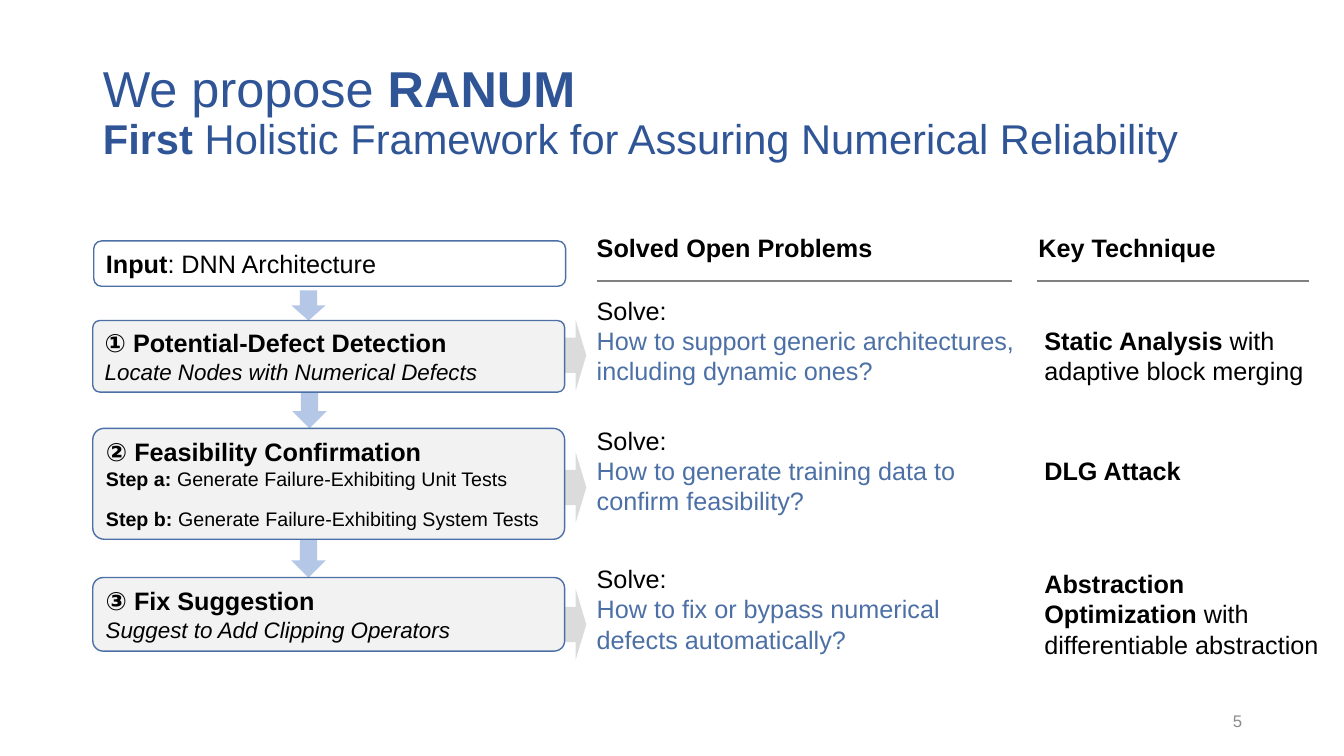
from dataclasses import dataclass

from lxml.etree import SubElement
from pptx import Presentation
from pptx.dml.color import RGBColor
from pptx.enum.shapes import MSO_CONNECTOR, MSO_SHAPE as Preset
from pptx.enum.text import MSO_ANCHOR as Anchor, MSO_AUTO_SIZE as AutoSize, PP_ALIGN as Align
from pptx.oxml.ns import qn
from pptx.shapes.autoshape import Shape
from pptx.slide import Slide
from pptx.text.text import TextFrame
from pptx.util import Inches, Pt

FONT = "Arial"
NAVY = RGBColor(0x2F, 0x55, 0x97)
BLUE = RGBColor(0x4C, 0x70, 0xA6)
LIGHT_BLUE = RGBColor(0xB4, 0xC7, 0xE7)
PALE_GRAY = RGBColor(0xF2, 0xF2, 0xF2)
ARROW_GRAY = RGBColor(0xDB, 0xDB, 0xDB)
RULE_GRAY = RGBColor(0x80, 0x80, 0x80)
NUMBER_GRAY = RGBColor(0x8C, 0x8C, 0x8C)
BLACK = RGBColor(0, 0, 0)

STEP_LEFT, STEP_WIDTH = 0.92, 4.68
PROBLEM_LEFT, TECHNIQUE_LEFT = 5.82, 10.26
HEADING_TOP, RULE_TOP = 2.26, 2.79


@dataclass
class Piece:
    text: str
    bold: bool = False
    italic: bool = False
    size: float = 18
    color: RGBColor = BLACK


@dataclass
class Line:
    pieces: list[Piece]
    space_before: float = 0


@dataclass
class Box:
    left: float
    top: float
    width: float
    height: float


@dataclass
class Step:
    top: float
    height: float
    corner: float
    lines: list[Line]
    pointer_top: float
    problem: str
    problem_box: Box
    technique: list[Line]
    technique_box: Box


@dataclass
class Heading:
    text: str
    box: Box
    rule_start: float
    rule_end: float


def write(frame: TextFrame, lines: list[Line]) -> None:
    frame.word_wrap = True
    for index, line in enumerate(lines):
        paragraph = frame.add_paragraph() if index else frame.paragraphs[0]
        paragraph.alignment = Align.LEFT
        paragraph.space_before = Pt(line.space_before)
        for piece in line.pieces:
            if piece.text == "\v":
                paragraph.add_line_break()
                continue
            run = paragraph.add_run()
            run.text = piece.text
            font = run.font
            font.name, font.size = FONT, Pt(piece.size)
            font.bold, font.italic = piece.bold, piece.italic
            font.color.rgb = piece.color


def place(box: Box) -> tuple[int, int, int, int]:
    return Inches(box.left), Inches(box.top), Inches(box.width), Inches(box.height)


def add_text(slide: Slide, box: Box, lines: list[Line]) -> Shape:
    shape = slide.shapes.add_textbox(*place(box))
    write(shape.text_frame, lines)
    shape.text_frame.auto_size = AutoSize.SHAPE_TO_FIT_TEXT
    return shape


def add_arrow(slide: Slide, box: Box, color: RGBColor, rotation: float = 0) -> None:
    shape = slide.shapes.add_shape(Preset.DOWN_ARROW, *place(box))
    shape.shadow.inherit = False
    shape.fill.solid()
    shape.fill.fore_color.rgb = color
    shape.line.fill.background()
    shape.rotation = rotation


def add_card(slide: Slide, box: Box, lines: list[Line], corner: float,
             fill: RGBColor | None = None) -> None:
    shape = slide.shapes.add_shape(Preset.ROUNDED_RECTANGLE, *place(box))
    shape.shadow.inherit = False
    shape.adjustments[0] = corner
    if fill is None:
        shape.fill.background()
    else:
        shape.fill.solid()
        shape.fill.fore_color.rgb = fill
    shape.line.color.rgb = BLUE
    shape.line.width = Pt(1)
    frame = shape.text_frame
    frame.vertical_anchor = Anchor.TOP
    frame.margin_right = 0
    write(frame, lines)
    frame.auto_size = AutoSize.SHAPE_TO_FIT_TEXT


def add_rule(slide: Slide, start: float, end: float) -> None:
    rule = slide.shapes.add_connector(MSO_CONNECTOR.STRAIGHT, Inches(start), Inches(RULE_TOP),
                                      Inches(end), Inches(RULE_TOP))
    rule.line.color.rgb = RULE_GRAY
    rule.line.width = Pt(1.5)
    SubElement(rule._element.spPr, qn("a:effectLst"))


STEPS = [
    Step(3.18, 0.71, 0.098,
         [Line([Piece("① Potential-Defect Detection", bold=True)]),
          Line([Piece("Locate Nodes with Numerical Defects", italic=True, size=16)])],
         3.42, "How to support generic architectures, including dynamic ones?",
         Box(PROBLEM_LEFT, 2.88, 4.44, 1.01),
         [Line([Piece("Static Analysis ", bold=True), Piece("with")]),
          Line([Piece("adaptive block merging")])],
         Box(TECHNIQUE_LEFT, 3.18, 3.07, 0.71)),
    Step(4.25, 1.1, 0.102,
         [Line([Piece("② Feasibility Confirmation", bold=True)]),
          Line([Piece("Step a: ", bold=True, size=14),
                Piece("Generate Failure-Exhibiting Unit Tests", size=14)]),
          Line([Piece("Step b: ", bold=True, size=14),
                Piece("Generate Failure-Exhibiting System Tests", size=14)], 11.5)],
         4.73, "How to generate training data to confirm feasibility?",
         Box(PROBLEM_LEFT, 4.17, 4.44, 1.01),
         [Line([Piece("DLG Attack", bold=True)])],
         Box(TECHNIQUE_LEFT, 4.47, 2.69, 0.4)),
    Step(5.73, 0.73, 0.141,
         [Line([Piece("③ Fix Suggestion", bold=True)]),
          Line([Piece("Suggest to Add Clipping Operators", italic=True, size=16)])],
         6.09, "How to fix or bypass numerical defects automatically?",
         Box(PROBLEM_LEFT, 5.54, 4.33, 1.01),
         [Line([Piece("Abstraction Optimization ", bold=True),
                Piece("with differentiable abstraction")])],
         Box(TECHNIQUE_LEFT, 5.59, 3, 1.01)),
]
HEADINGS = [
    Heading("Solved Open Problems", Box(PROBLEM_LEFT, HEADING_TOP, 3.89, 0.4), 5.92, 10.04),
    Heading("Key Technique", Box(10.2, HEADING_TOP, 2.79, 0.4), 10.29, 12.98),
]
FLOW_ARROWS = [Box(2.89, 2.88, 0.34, 0.3), Box(2.9, 3.88, 0.34, 0.37), Box(2.89, 4.98, 0.34, 0.75)]


def main() -> None:
    presentation = Presentation()
    presentation.slide_width, presentation.slide_height = Inches(13.33), Inches(7.5)
    slide = presentation.slides.add_slide(presentation.slide_layouts[5])

    # Title
    title = slide.shapes.title
    title.left, title.top, title.width, title.height = place(Box(0.92, 0.4, 11.5, 1.45))
    write(title.text_frame, [Line([
        Piece("We propose ", size=36, color=NAVY), Piece("RANUM", True, size=36, color=NAVY),
        Piece("\v"), Piece("First ", True, size=29.7, color=NAVY),
        Piece("Holistic Framework for Assuring Numerical Reliability", size=29.7, color=NAVY)])])
    title.text_frame.vertical_anchor = Anchor.MIDDLE
    title.text_frame.auto_size = AutoSize.NONE
    title.text_frame.paragraphs[0].line_spacing = 0.9

    # Arrows lie behind the cards
    for step in STEPS:
        add_arrow(slide, Box(5.36, step.pointer_top, 0.7, 0.21), ARROW_GRAY, 270)
    for box in FLOW_ARROWS:
        add_arrow(slide, box, LIGHT_BLUE)

    # Pipeline with its problems and techniques
    add_card(slide, Box(0.93, 2.39, STEP_WIDTH, 0.45),
             [Line([Piece("Input", bold=True), Piece(": DNN Architecture")])], 0.17)
    for step in STEPS:
        add_card(slide, Box(STEP_LEFT, step.top, STEP_WIDTH, step.height), step.lines,
                 step.corner, PALE_GRAY)
        add_text(slide, step.problem_box,
                 [Line([Piece("Solve:")]), Line([Piece(step.problem, color=BLUE)])])
        add_text(slide, step.technique_box, step.technique)

    # Column headings
    for heading in HEADINGS:
        add_text(slide, heading.box, [Line([Piece(heading.text, bold=True)])])
        add_rule(slide, heading.rule_start, heading.rule_end)

    # Slide number
    number = add_text(slide, Box(9.42, 6.95, 3, 0.4),
                      [Line([Piece("5", size=12, color=NUMBER_GRAY)])])
    number.text_frame.auto_size = AutoSize.NONE
    number.text_frame.vertical_anchor = Anchor.MIDDLE
    number.text_frame.paragraphs[0].alignment = Align.RIGHT
    presentation.save("out.pptx")


if __name__ == "__main__":
    main()
